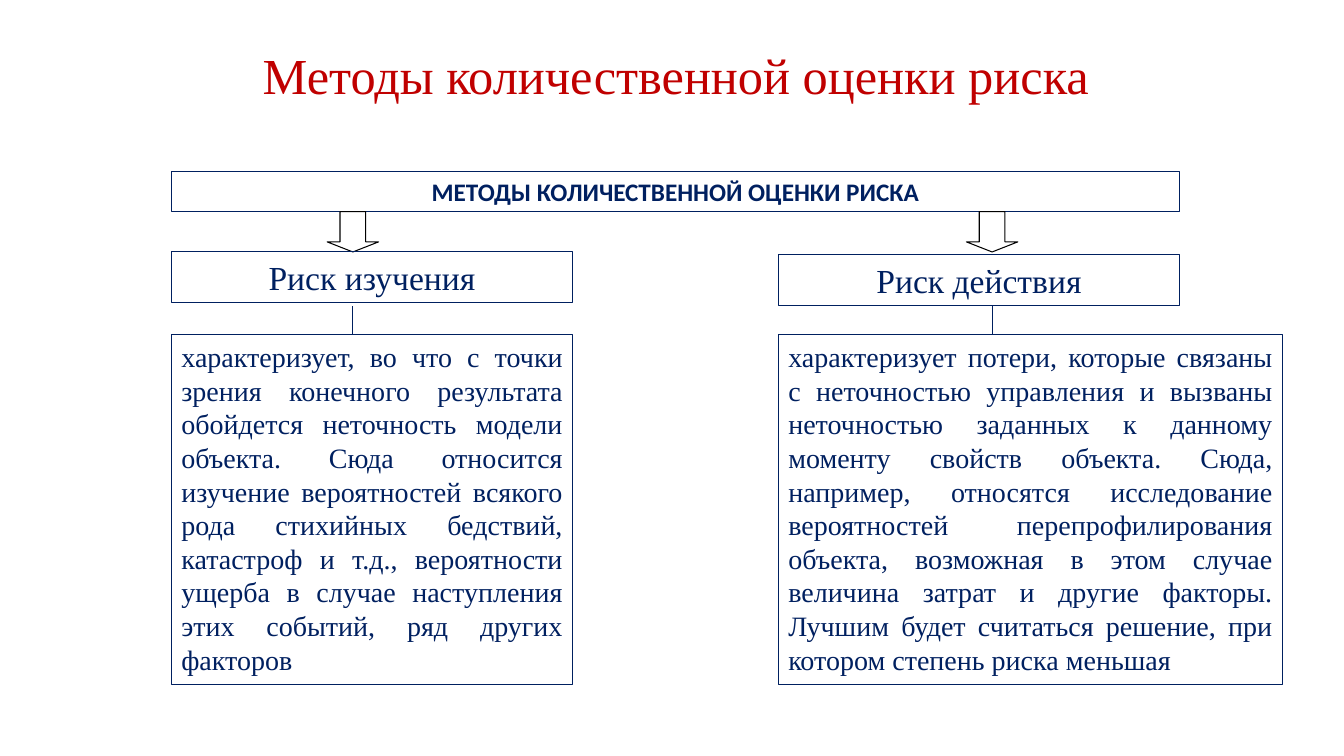
from dataclasses import dataclass

from pptx import Presentation
from pptx import util as u
from pptx.dml.color import RGBColor
from pptx.enum import shapes, text
from pptx.oxml import parse_xml
from pptx.oxml.ns import nsdecls


@dataclass(frozen=True)
class Theme:
    red: str = "C00000"
    navy: str = "002060"
    black: str = "000000"
    white: str = "FFFFFF"
    serif: str = "Times New Roman"
    sans: str = "Calibri"
    title: int = 36
    head: int = 18
    name: int = 24
    body: int = 20
    line: float = 0.75


T = Theme()
KIND = shapes.MSO_SHAPE
ALIGN = text.PP_ALIGN

LEFT, TOP = 17, 17  # grid cells of a tenth of an inch
WIDE = 100
HEAD, NAME, BODY = 4, 5, 34.7
CARD = 39.8
ARROW = 5.1

RISKS = [
    dict(
        left=LEFT, top=25, wide=CARD, mid=35, name="Риск изучения",
        body="характеризует, во что с точки зрения конечного результата "
             "обойдется неточность модели объекта. Сюда относится изучение "
             "вероятностей всякого рода стихийных бедствий, катастроф и т.д., "
             "вероятности ущерба в случае наступления этих событий, "
             "ряд других факторов"),
    dict(
        left=LEFT + WIDE - CARD, top=25.3, wide=50, mid=98.4,
        name="Риск действия",
        body="характеризует потери, которые связаны с неточностью управления "
             "и вызваны неточностью заданных к данному моменту свойств "
             "объекта. Сюда, например, относятся исследование вероятностей "
             "перепрофилирования объекта, возможная в этом случае величина "
             "затрат и другие факторы. Лучшим будет считаться решение, "
             "при котором степень риска меньшая"),
]


def cell(*counts):
    """Turn counts of grid cells into lengths."""
    return [u.Inches(n / 10) for n in counts]


def color(code):
    return RGBColor.from_string(code)


def write(frame, words, size, font=T.serif, ink=T.navy, bold=False,
          align=ALIGN.CENTER, space=None):
    frame.word_wrap = True
    para = frame.paragraphs[0]
    para.alignment = align
    para.line_spacing = space
    run = para.add_run()
    run.text = words
    run.font.size = u.Pt(size)
    run.font.name = font
    run.font.bold = bold
    run.font.color.rgb = color(ink)


def draw(slide, kind, box, ink):
    shape = slide.shapes.add_shape(kind, *cell(*box))
    shape.shadow.inherit = False
    shape.line.color.rgb = color(ink)
    shape.line.width = u.Pt(T.line)
    return shape


def panel(slide, box, words, size, **form):
    """Add an outlined box that grows with its text."""
    shape = draw(slide, KIND.RECTANGLE, box, T.navy)
    shape.fill.background()
    frame = shape.text_frame
    frame.vertical_anchor = text.MSO_ANCHOR.TOP
    frame.auto_size = text.MSO_AUTO_SIZE.SHAPE_TO_FIT_TEXT
    write(frame, words, size, **form)


def arrow(slide, mid, top):
    shape = draw(slide, KIND.DOWN_ARROW,
                 (mid - ARROW / 2, top, ARROW, HEAD), T.black)
    shape.fill.solid()
    shape.fill.fore_color.rgb = color(T.white)
    shape.adjustments[0] = 0.5
    shape.adjustments[1] = 0.25


def link(slide, mid, top, end):
    line = slide.shapes.add_connector(
        shapes.MSO_CONNECTOR.STRAIGHT, *cell(mid, top, mid, end))
    line.line.color.rgb = color(T.navy)
    line.line.width = u.Pt(T.line)
    props = line._element.spPr
    props.append(parse_xml(f"<a:effectLst {nsdecls('a')}/>"))


def title(slide, words):
    shape = slide.shapes.title
    shape.left, shape.top, shape.width, shape.height = cell(
        6.8, 3.7, 120.5, 8.2)
    shape.text_frame.vertical_anchor = text.MSO_ANCHOR.MIDDLE
    write(shape.text_frame, words, T.title, ink=T.red, space=0.9)


def branch(slide, left, top, wide, mid, name, body):
    """Add one kind of risk: arrow, name, link and description."""
    base = 33.2
    arrow(slide, mid, TOP + HEAD)
    panel(slide, (left, top, CARD, NAME), name, T.name)
    link(slide, mid, base - 2.8, base)
    panel(slide, (left, base, wide, BODY), body, T.body, align=ALIGN.JUSTIFY)


def main():
    deck = Presentation()
    deck.slide_width, deck.slide_height = u.Inches(13.33), u.Inches(7.5)
    slide = deck.slides.add_slide(deck.slide_layouts.get_by_name("Title Only"))
    title(slide, "Методы количественной оценки риска")
    panel(slide, (LEFT, TOP, WIDE, HEAD),
          "МЕТОДЫ КОЛИЧЕСТВЕННОЙ ОЦЕНКИ РИСКА", T.head,
          font=T.sans, bold=True)
    for risk in RISKS:
        branch(slide, **risk)
    deck.save("out.pptx")


if __name__ == "__main__":
    main()
